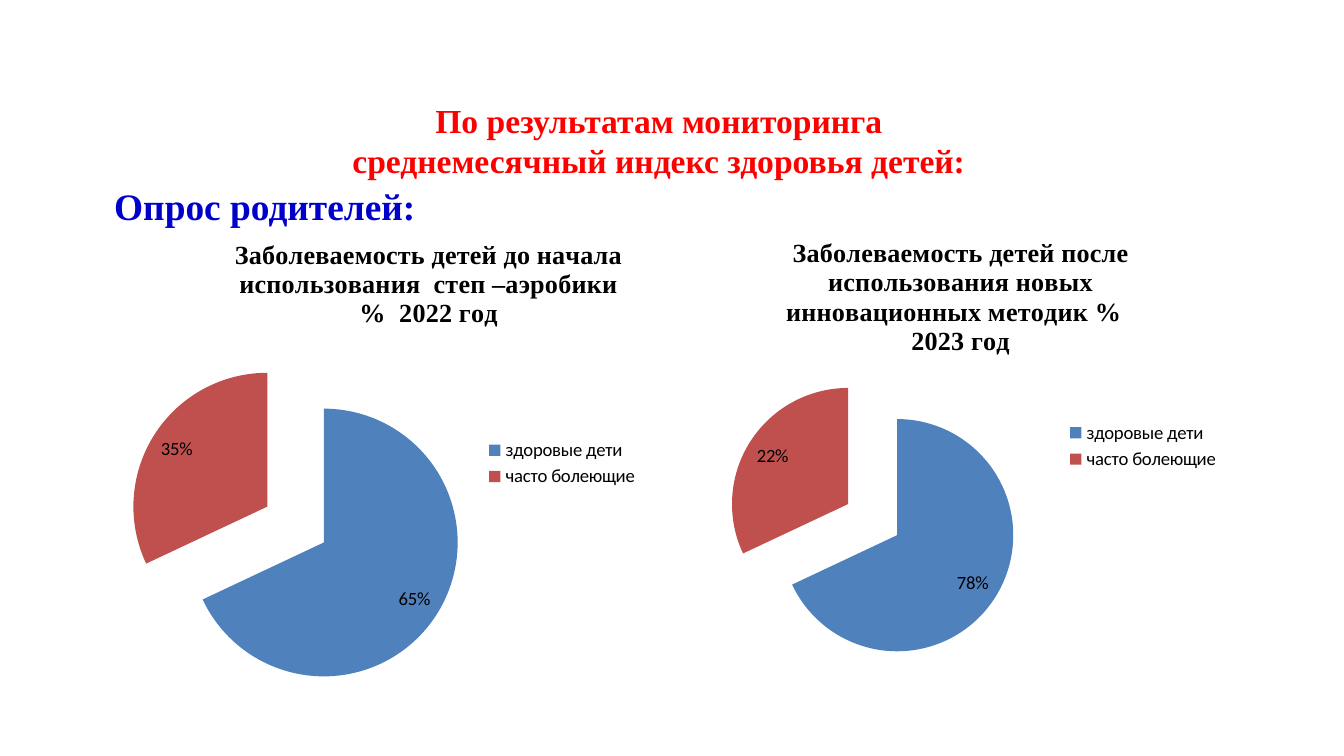
from lxml.etree import SubElement
from pptx import Presentation
from pptx.chart.data import CategoryChartData as Data
from pptx.dml.color import RGBColor
from pptx.enum.chart import XL_CHART_TYPE as Kind
from pptx.enum.chart import XL_LABEL_POSITION as Spot
from pptx.enum.chart import XL_LEGEND_POSITION as Side
from pptx.enum.text import MSO_ANCHOR as Anchor
from pptx.enum.text import MSO_AUTO_SIZE as Fit
from pptx.enum.text import PP_ALIGN as Align
from pptx.oxml.ns import qn
from pptx.util import Pt

SCALE = 914400 / 134.4
SERIF = "Times New Roman"
GROUPS = ("здоровые дети", "часто болеющие")
SHARES = (68, 32)
FILLS = ("4F81BD", "C0504D")


def px(*nums):
    return [round(n * SCALE) for n in nums]


def style(font, size, color, name=SERIF, bold=True):
    font.size = Pt(size)
    font.name = name
    font.bold = bold
    font.color.rgb = RGBColor.from_string(color)


def pin(part, index, **spots):
    """Give a chart part a manual layout, in fractions of the chart."""
    old = part.find(qn("c:layout"))
    if old is not None:
        part.remove(old)
    layout = SubElement(part, qn("c:layout"))
    part.insert(index, layout)
    manual = SubElement(layout, qn("c:manualLayout"))
    if "w" in spots:
        SubElement(manual, qn("c:layoutTarget")).set("val", "inner")
    for key in ("x", "y"):
        SubElement(manual, qn(f"c:{key}Mode")).set("val", "edge")
    for key, value in spots.items():
        SubElement(manual, qn(f"c:{key}")).set("val", f"{value:.2f}")


def add_pie(slide, box, title, labels, head, plot):
    """Draw an exploded pie; head and plot are fractions of the box."""
    data = Data()
    data.categories = GROUPS
    data.add_series("Series 1", SHARES)
    chart = slide.shapes.add_chart(Kind.PIE, *px(*box), data).chart
    style(chart.font, 10, "000000", "Calibri", False)

    chart.has_title = True
    frame = chart.chart_title.text_frame
    frame.text = title
    for para in frame.paragraphs:
        style(para.font, 14, "000000")
    pin(chart.chart_title._element, 1, **head)
    pin(chart._chartSpace.chart.plotArea, 0, **plot)

    chart.has_legend = True
    chart.legend.position = Side.RIGHT
    chart.legend.include_in_layout = False

    series = chart.plots[0].series[0]
    burst = series._element.makeelement(qn("c:explosion"), {"val": "25"})
    series._element.find(qn("c:tx")).addnext(burst)
    for i, (fill, text) in enumerate(zip(FILLS, labels)):
        point = series.points[i]
        point.format.fill.solid()
        point.format.fill.fore_color.rgb = RGBColor.from_string(fill)
        point.format.line.fill.background()
        label = point.data_label
        label.text_frame.text = text
        para = label.text_frame.paragraphs[0]
        style(para.font, 10, "000000", "Calibri", False)
        label.position = Spot.INSIDE_END


def add_title(slide, box):
    title = slide.shapes.title
    title.left, title.top, title.width, title.height = px(*box)
    frame = title.text_frame
    frame.text = ("По результатам мониторинга "
                  "среднемесячный индекс здоровья детей:")
    frame.word_wrap = True
    frame.auto_size = Fit.SHAPE_TO_FIT_TEXT
    frame.vertical_anchor = Anchor.TOP
    para = frame.paragraphs[0]
    para.alignment = Align.CENTER
    style(para.font, 18, "FF0000")


def add_survey(slide, box):
    frame = slide.shapes.add_textbox(*px(*box)).text_frame
    frame.text = "Опрос родителей:"
    frame.word_wrap = False
    frame.auto_size = Fit.SHAPE_TO_FIT_TEXT
    style(frame.paragraphs[0].font, 20, "0000CC")


def main():
    deck = Presentation()
    deck.slide_width, deck.slide_height = px(1344, 756)
    slide = deck.slides.add_slide(deck.slide_layouts[5])
    add_pie(slide, (112, 208, 540, 511),
            "Заболеваемость детей до начала использования  степ –аэробики\n"
            "%  2022 год", ("65%", "35%"),
            dict(x=0.22, y=0.05), dict(x=0.03, y=0.29, w=0.62, h=0.66))
    add_pie(slide, (683, 208, 550, 476),
            "Заболеваемость детей после использования новых "
            "инновационных методик %  \n2023 год", ("78%", "22%"),
            dict(x=0.18, y=0.05), dict(x=0.08, y=0.35, w=0.53, h=0.61))
    add_title(slide, (323, 93, 672, 95))
    add_survey(slide, (101, 177, 331, 59))
    deck.save("out.pptx")


if __name__ == "__main__":
    main()
